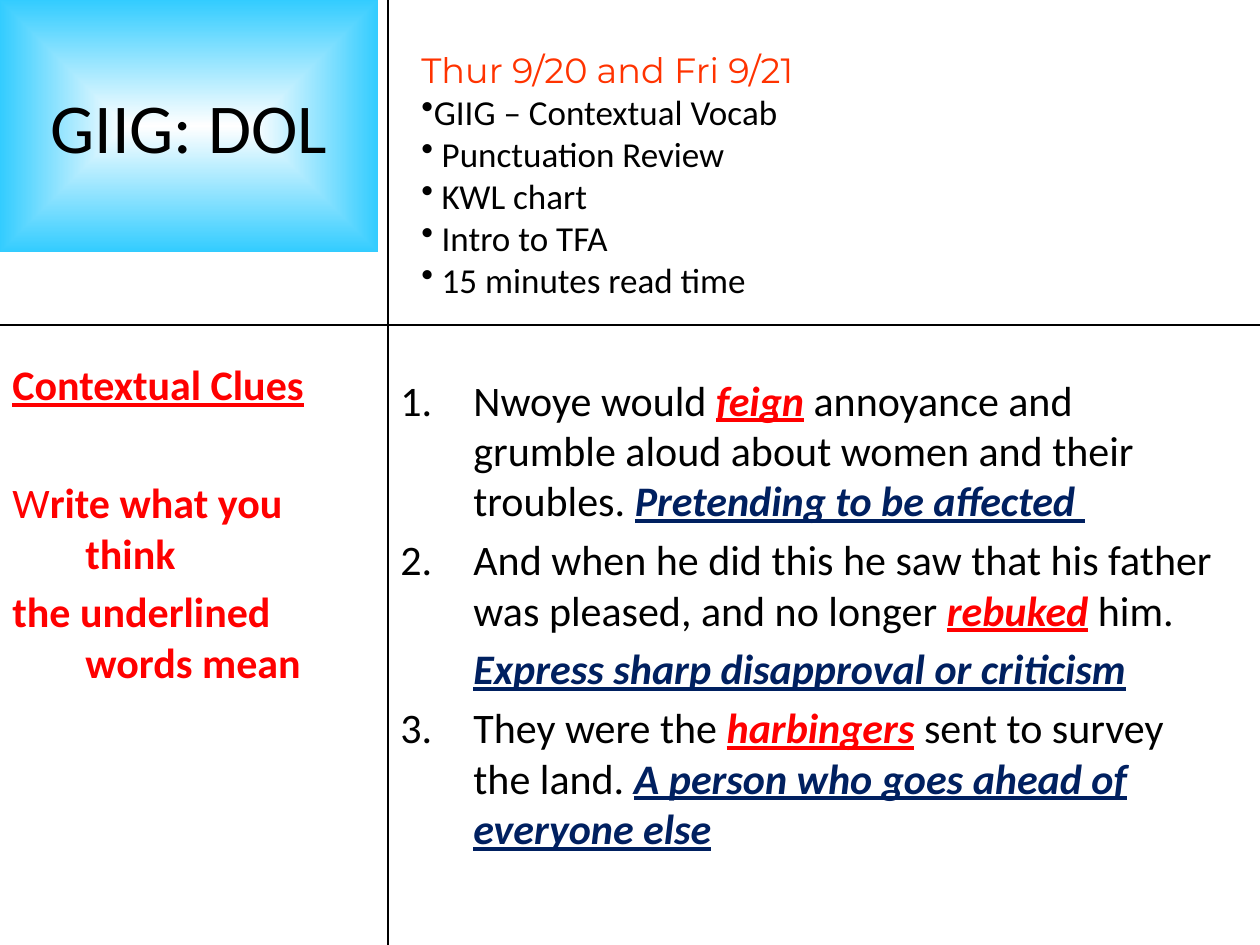
from lxml import etree
from pptx import Presentation
from pptx import util as u
from pptx.dml.color import RGBColor
from pptx.enum import shapes, text
from pptx.oxml import parse_xml
from pptx.oxml.ns import nsdecls, qn

SCALE = u.Inches(1) / 126
BLACK = RGBColor(0x00, 0x00, 0x00)
WHITE = RGBColor(0xFF, 0xFF, 0xFF)
RED = RGBColor(0xFF, 0x00, 0x00)
ORANGE = RGBColor(0xFF, 0x33, 0x00)
NAVY = RGBColor(0x00, 0x20, 0x60)
SKY = RGBColor(0x33, 0xCC, 0xFF)

HANG = 73  # hanging indent of the body text
GAP = 4.8  # space before a body paragraph, in points
WORD = dict(color=RED, bold=True, italic=True, underline=True)
MEANING = dict(WORD, color=NAVY)


def px(length):
    return u.Emu(round(length * SCALE))


def add_text(para, words, size=24, font="Calibri", color=BLACK,
             bold=False, italic=False, underline=False):
    span = para.add_run()
    span.text = words
    style = span.font
    style.size, style.name = u.Pt(size), font
    style.bold, style.italic, style.underline = bold, italic, underline
    style.color.rgb = color


def add_para(frame, spans, before=0, margin=0, indent=0, bullet=None, number=None):
    """Add a paragraph of (words, format) spans; the first fills the empty one."""
    first = frame.paragraphs[0]
    para = frame.add_paragraph() if first.runs else first
    para.alignment = text.PP_ALIGN.LEFT
    para.space_before = u.Pt(before)
    props = para._p.get_or_add_pPr()
    props.set("marL", str(px(margin)))
    props.set("indent", str(px(indent)))
    if bullet:
        etree.SubElement(props, qn("a:buChar"), char=bullet)
    elif number:
        etree.SubElement(props, qn("a:buAutoNum"), type="arabicPeriod",
                         startAt=str(number))
    for words, style in spans:
        add_text(para, words, **style)
    return para


def add_box(page, left, top, width, height):
    box = page.shapes.add_textbox(px(left), px(top), px(width), px(height))
    box.text_frame.word_wrap = True
    return box


def add_panel(page, left, top, width, height):
    panel = page.shapes.add_shape(shapes.MSO_SHAPE.RECTANGLE,
                                  px(left), px(top), px(width), px(height))
    panel.shadow.inherit = False
    panel.line.fill.background()
    panel.text_frame.word_wrap = True
    return panel


def add_rule(page, x1, y1, x2, y2):
    rule = page.shapes.add_connector(shapes.MSO_CONNECTOR.STRAIGHT,
                                     px(x1), px(y1), px(x2), px(y2))
    rule.line.color.rgb = BLACK
    rule.line.width = u.Pt(0.75)
    etree.SubElement(rule._element.spPr, qn("a:effectLst"))


def add_title(page):
    panel = add_panel(page, 0, 0, 378, 252)
    # Gradient running from the centre to the edges
    gradient = parse_xml(
        f'<a:gradFill {nsdecls("a")} rotWithShape="1"><a:gsLst>'
        f'<a:gs pos="0"><a:srgbClr val="{WHITE}"/></a:gs>'
        f'<a:gs pos="100000"><a:srgbClr val="{SKY}"/></a:gs></a:gsLst>'
        '<a:path path="rect"><a:fillToRect l="50000" t="50000" r="50000" b="50000"/>'
        '</a:path></a:gradFill>')
    panel._element.spPr.find(qn("a:prstGeom")).addnext(gradient)
    frame = panel.text_frame
    frame.vertical_anchor = text.MSO_ANCHOR.MIDDLE
    para = add_para(frame, [("GIIG: DOL", dict(size=40))])
    para.alignment = text.PP_ALIGN.CENTER


def add_instructions(page):
    frame = add_box(page, 0, 315, 347, 529).text_frame
    frame.margin_top = px(44)
    bold = dict(color=RED, bold=True)
    rows = [
        (0, [("Contextual Clues", dict(bold, underline=True))]),
        (38.5, [("W", dict(color=RED)), ("rite what you think", bold)]),
        (GAP, [("the underlined words mean", bold)]),
    ]
    for before, spans in rows:
        add_para(frame, spans, before=before, margin=HANG, indent=-HANG)


def add_sentences(page):
    panel = add_panel(page, 388, 368, 840, 546)
    panel.fill.solid()
    panel.fill.fore_color.rgb = WHITE
    color = panel._element.spPr.find(qn("a:solidFill"))[0]
    etree.SubElement(color, qn("a:alpha"), val="42000")
    frame = panel.text_frame
    frame.vertical_anchor = text.MSO_ANCHOR.TOP
    rows = [
        (1, [("Nwoye would ", {}), ("feign", WORD),
             (" annoyance and grumble aloud about women and their troubles. ", {}),
             ("Pretending to be affected ", MEANING)]),
        (2, [("And when he did this he saw that his father was pleased, "
              "and no longer ", {}), ("rebuked", WORD), (" him.", {})]),
        (None, [("Express sharp disapproval or criticism", MEANING)]),
        (3, [("They were the ", {}), ("harbingers", WORD),
             (" sent to survey the land. ", {}),
             ("A person who goes ahead of everyone else", MEANING)]),
    ]
    for number, spans in rows:
        add_para(frame, spans, before=0 if number == 1 else GAP, margin=HANG,
                 indent=-HANG if number else 0, number=number)


def add_agenda(page):
    frame = add_box(page, 409, 42, 732, 262).text_frame
    add_para(frame, [("Thur 9/20 and Fri 9/21",
                      dict(size=20, font="Montserrat", color=ORANGE))])
    for item in ("GIIG – Contextual Vocab", " Punctuation Review", " KWL chart",
                 " Intro to TFA", " 15 minutes read time"):
        add_para(frame, [(item, dict(size=20))], bullet="•")


def main():
    deck = Presentation()
    deck.slide_width, deck.slide_height = px(1260), px(945)
    page = deck.slides.add_slide(deck.slide_layouts[6])

    # Four quarters
    add_title(page)
    add_instructions(page)
    add_sentences(page)
    add_agenda(page)

    # Dividing lines
    add_rule(page, 0, 325, 1260, 325)
    add_rule(page, 388, 0, 388, 945)

    deck.save("out.pptx")


if __name__ == "__main__":
    main()
